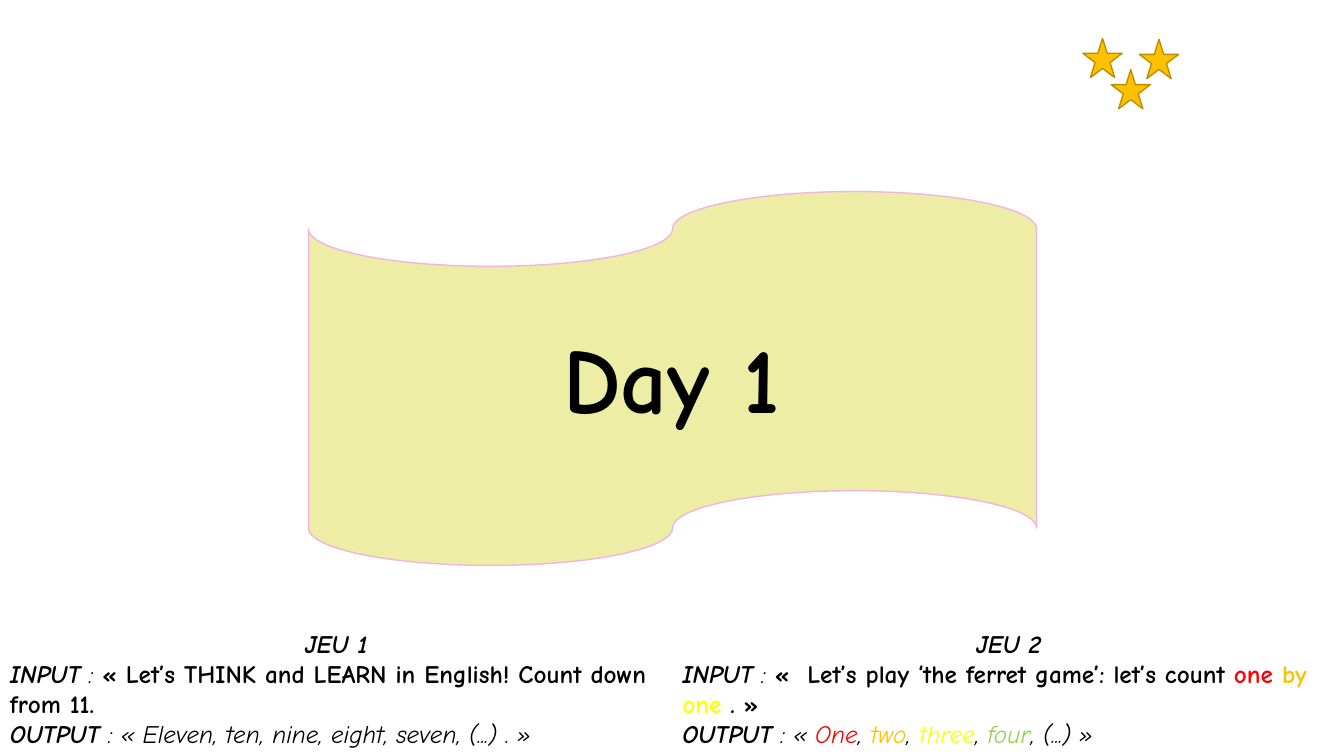
from dataclasses import dataclass

from pptx import Presentation
from pptx.dml.color import RGBColor
from pptx.enum.shapes import MSO_SHAPE
from pptx.enum.text import MSO_ANCHOR, MSO_AUTO_SIZE, PP_ALIGN
from pptx.shapes.autoshape import Shape
from pptx.slide import Slide
from pptx.text.text import TextFrame
from pptx.util import Emu, Pt

PX = 9144
FONT = "Comic Neue"
STAR = MSO_SHAPE.STAR_5_POINT
TAPE = MSO_SHAPE.FLOWCHART_PUNCHED_TAPE
RECTANGLE = MSO_SHAPE.RECTANGLE
TOP = MSO_ANCHOR.TOP
GROW = MSO_AUTO_SIZE.SHAPE_TO_FIT_TEXT
CENTER = PP_ALIGN.CENTER
LEFT = PP_ALIGN.LEFT

BLACK = "000000"
RED = "FF0000"
GOLD = "FFC000"
YELLOW = "FFFF00"
GREEN = "92D050"
BANNER = "EDEDA6"
BANNER_EDGE = "F1B5E0"
STAR_EDGE = "BD8E00"


@dataclass(frozen=True)
class Box:
    left: int
    top: int
    width: int
    height: int

    def emu(self) -> tuple[Emu, ...]:
        return tuple(Emu(n * PX) for n in (self.left, self.top, self.width, self.height))


@dataclass(frozen=True)
class Phrase:
    text: str
    bold: bool = True
    italic: bool = False
    color: str = BLACK


@dataclass(frozen=True)
class Game:
    title: str
    spoken: list[Phrase]
    answer: list[Phrase]


GAMES = [
    Game(
        "JEU 1",
        [Phrase(" « Let’s THINK and LEARN in English! Count down from 11. ")],
        [Phrase(" : « Eleven, ten, nine, eight, seven, (...) . »", False, True)],
    ),
    Game(
        "JEU 2",
        [
            Phrase(" «  Let’s play ‘the ferret game’: let’s count "),
            Phrase("one ", color=RED),
            Phrase("by ", color=GOLD),
            Phrase("one", color=YELLOW),
            Phrase(" . »"),
        ],
        [
            Phrase(" : « ", False, True),
            Phrase("One", False, True, RED),
            Phrase(", ", False, True),
            Phrase("two", False, True, GOLD),
            Phrase(", ", False, True),
            Phrase("three", False, True, YELLOW),
            Phrase(", ", False, True),
            Phrase("four", False, True, GREEN),
            Phrase(", (...) »", False, True),
        ],
    ),
]
STAR_CORNERS = [(1074, 38), (1130, 39), (1102, 69)]


def rgb(color: str) -> RGBColor:
    return RGBColor.from_string(color)


def draw_shape(slide: Slide, kind: MSO_SHAPE, box: Box, fill: str, edge: str | None = None) -> Shape:
    shape = slide.shapes.add_shape(kind, *box.emu())
    shape.shadow.inherit = False
    shape.fill.solid()
    shape.fill.fore_color.rgb = rgb(fill)
    if edge:
        shape.line.color.rgb = rgb(edge)
        shape.line.width = Pt(1)
    else:
        shape.line.fill.background()
    return shape


def write(frame: TextFrame, lines: list[list[Phrase]], size: int) -> None:
    frame.word_wrap = True
    frame.auto_size = GROW
    frame.vertical_anchor = TOP
    for index, line in enumerate(lines):
        paragraph = frame.add_paragraph() if index else frame.paragraphs[0]
        paragraph.alignment = LEFT if index else CENTER
        for phrase in line:
            run = paragraph.add_run()
            run.text = phrase.text
            run.font.name = FONT
            run.font.size = Pt(size)
            run.font.bold = phrase.bold
            run.font.italic = phrase.italic
            run.font.color.rgb = rgb(phrase.color)


def draw_game(slide: Slide, game: Game, box: Box) -> None:
    lines = [
        [Phrase(game.title, italic=True)],
        [Phrase("INPUT", italic=True), Phrase(" :", False, True), *game.spoken],
        [Phrase("OUTPUT", italic=True), *game.answer],
    ]
    write(slide.shapes.add_textbox(*box.emu()).text_frame, lines, 18)


def main() -> None:
    deck = Presentation()
    deck.slide_width = Emu(1333 * PX)
    deck.slide_height = Emu(750 * PX)
    slide = deck.slides.add_slide(deck.slide_layouts[6])

    draw_shape(slide, TAPE, Box(306, 190, 722, 371), BANNER, BANNER_EDGE)
    day = draw_shape(slide, RECTANGLE, Box(323, 314, 686, 121), BANNER)
    write(day.text_frame, [[Phrase("Day 1")]], 66)

    for left, top in STAR_CORNERS:
        draw_shape(slide, STAR, Box(left, top, 39, 39), GOLD, STAR_EDGE)

    for column, game in enumerate(GAMES):
        draw_game(slide, game, Box(column * 667, 618, 667, 131))

    deck.save("out.pptx")


if __name__ == "__main__":
    main()
